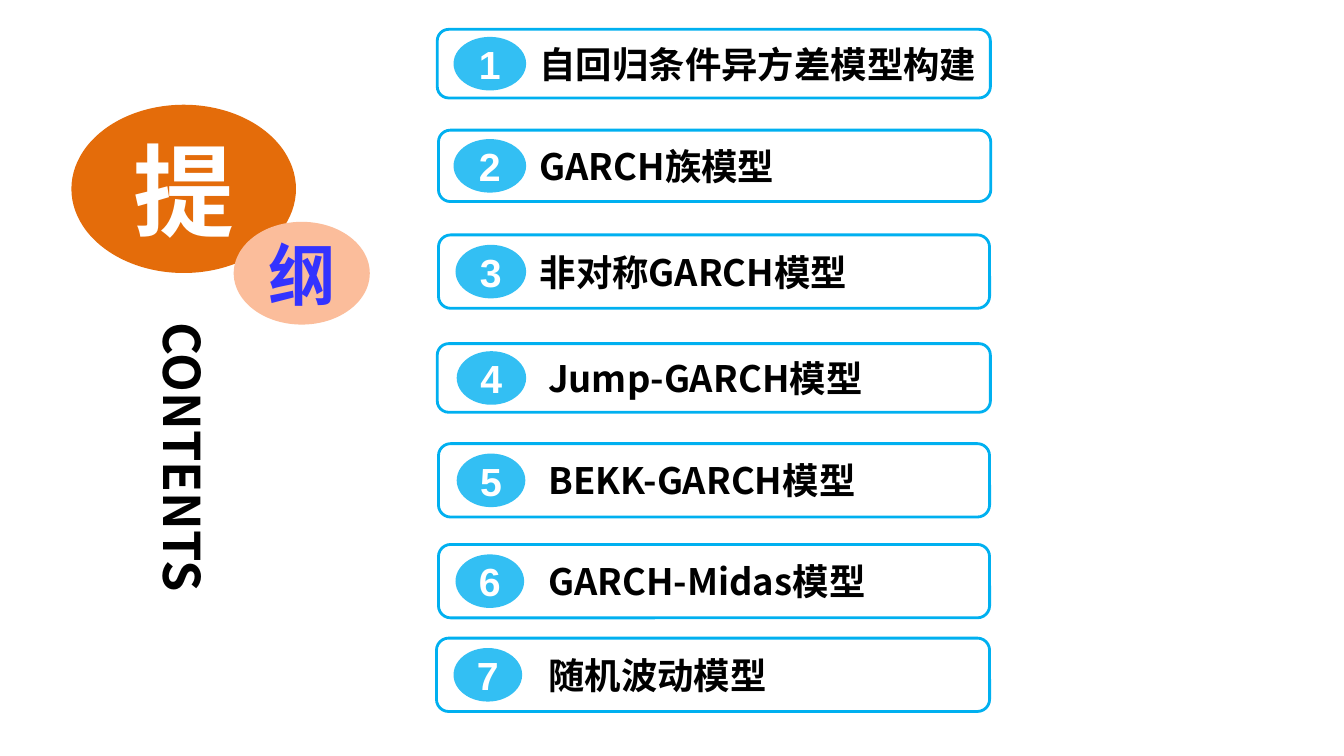
from lxml import etree
from pptx import Presentation
from pptx.dml.color import RGBColor
from pptx.enum.shapes import MSO_SHAPE
from pptx.enum.text import MSO_ANCHOR, MSO_AUTO_SIZE, PP_ALIGN
from pptx.oxml.ns import qn
from pptx.util import Cm, Pt

ELLIPSE, ROUNDED = MSO_SHAPE.OVAL, MSO_SHAPE.ROUNDED_RECTANGLE
MIDDLE, NO_FIT = MSO_ANCHOR.MIDDLE, MSO_AUTO_SIZE.NONE
LEFT, CENTER = PP_ALIGN.LEFT, PP_ALIGN.CENTER

WHITE = RGBColor(0xFF, 0xFF, 0xFF)
BLACK = RGBColor(0, 0, 0)
SKY = RGBColor(0x00, 0xB0, 0xF0)
ORANGE = RGBColor(0xE4, 0x6C, 0x0A)
PEACH = RGBColor(0xFB, 0xBD, 0x9B)
BLUE = RGBColor(0x33, 0x33, 0xFF)
CJK_FONT, DIGIT_FONT = "Noto Sans CJK SC", "Arial"

BADGE_HEIGHT = 1.35
# Topic, row box (left, top, width, height), badge left and width, text left; in cm
TOPICS = [
    ("自回归条件异方差模型构建", (11.02, 0.74, 13.94, 1.73), (11.43, 1.83), 13.51),
    ("GARCH族模型", (11.05, 3.28, 13.92, 1.8), (11.43, 1.83), 13.51),
    ("非对称GARCH模型", (11.05, 5.92, 13.89, 1.85), (11.48, 1.78), 13.51),
    ("Jump-GARCH模型", (11.02, 8.66, 13.94, 1.73), (11.51, 1.75), 13.73),
    ("BEKK-GARCH模型", (11.05, 11.18, 13.89, 1.85), (11.51, 1.73), 13.73),
    ("GARCH-Midas模型", (11.05, 13.72, 13.89, 1.85), (11.48, 1.73), 13.73),
    ("随机波动模型", (11, 16.08, 13.94, 1.85), (11.43, 1.73), 13.73),
]


def write_text(shape, text, size, color, font, align, inset=0):
    """Write one bold line, centred vertically, with the given left inset in cm."""
    frame = shape.text_frame
    frame.text = text
    frame.word_wrap = True
    frame.auto_size = NO_FIT
    frame.vertical_anchor = MIDDLE
    frame.margin_left = Cm(inset)
    frame.margin_right = frame.margin_top = frame.margin_bottom = 0
    para = frame.paragraphs[0]
    para.alignment = align
    span = para.runs[0]
    span.font.size = Pt(size)
    span.font.bold = True
    span.font.name = font
    span.font.color.rgb = color
    etree.SubElement(span.font._element, qn("a:ea"), typeface=font)


def add_filled(page, kind, box, fill):
    shape = page.shapes.add_shape(kind, *map(Cm, box))
    shape.shadow.inherit = False
    shape.fill.solid()
    shape.fill.fore_color.rgb = fill
    shape.line.fill.background()
    return shape


def add_heading(page, box):
    """Two overlapping ellipses above the vertical title."""
    left, top = box
    large = add_filled(page, ELLIPSE, (left, top, 5.66, 4.24), ORANGE)
    write_text(large, "提", 72, WHITE, CJK_FONT, CENTER)
    small = add_filled(page, ELLIPSE, (left + 4.09, top + 2.95, 3.43, 2.59), PEACH)
    write_text(small, "纲", 48, BLUE, CJK_FONT, CENTER)

    title = page.shapes.title
    title.left, title.top = Cm(left + 1.7), Cm(top + 5.49)
    title.width, title.height = Cm(2.26), Cm(7.62)
    write_text(title, "CONTENTS", 36, BLACK, CJK_FONT, LEFT)
    title.text_frame._txBody.bodyPr.set("vert", "eaVert")


def add_topic(page, number, topic, box, badge_span, text_left):
    """One outlined row with a numbered badge centred in its height."""
    left, top, width, height = box
    row = add_filled(page, ROUNDED, box, WHITE)
    row.line.color.rgb = SKY
    row.line.width = Pt(2)
    write_text(row, topic, 26, BLACK, CJK_FONT, LEFT, text_left - left)

    badge_left, badge_width = badge_span
    badge_top = top + (height - BADGE_HEIGHT) / 2
    badge = add_filled(page, ELLIPSE, (badge_left, badge_top, badge_width, BADGE_HEIGHT), SKY)
    color = badge.fill._xPr.find(qn("a:solidFill"))[0]
    etree.SubElement(color, qn("a:alpha"), val="80000")
    write_text(badge, str(number), 28, WHITE, DIGIT_FONT, CENTER)


def main():
    deck = Presentation()
    deck.slide_width, deck.slide_height = Cm(33.87), Cm(19.05)
    page = deck.slides.add_slide(deck.slide_layouts[5])
    add_heading(page, (1.8, 2.64))
    for number, topic in enumerate(TOPICS, start=1):
        add_topic(page, number, *topic)
    deck.save("out.pptx")


if __name__ == "__main__":
    main()
